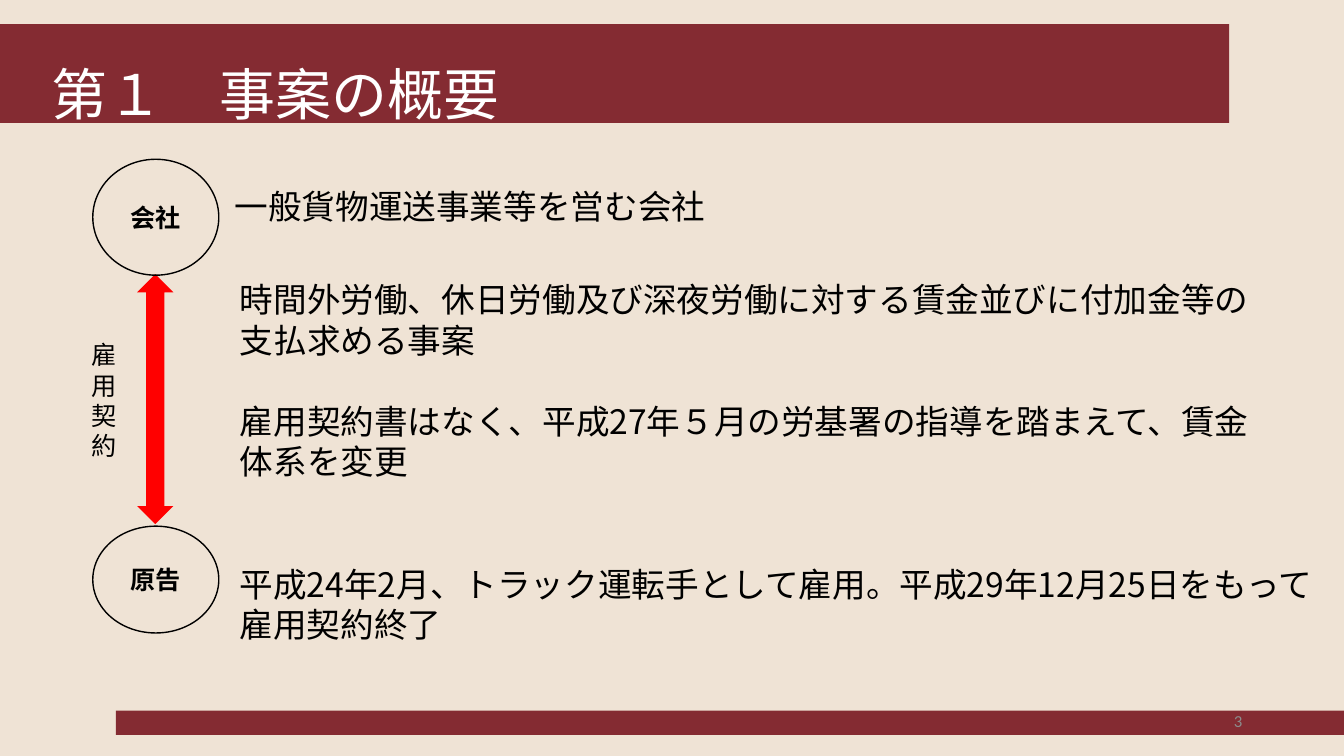
"""Build the case overview slide: company, plaintiff and their employment contract."""
import pptx
import pptx.util
import pptx.dml.color
import pptx.enum.shapes
import pptx.enum.text
import pptx.oxml.ns
import lxml.etree

Inches = pptx.util.Inches
Pt = pptx.util.Pt
SHAPE = pptx.enum.shapes.MSO_SHAPE
ALIGN = pptx.enum.text.PP_ALIGN
ANCHOR = pptx.enum.text.MSO_ANCHOR

THEME = {
    "paper": "EFE3D5", "band": "842B32", "ink": "000000", "white": "FFFFFF",
    "arrow": "FF0000", "muted": "8C8C8C",
    "font": "Noto Sans CJK JP", "number_font": "Calibri",
    "title": 40, "text": 24, "label": 18, "number": 12,
}


def color(name):
    return pptx.dml.color.RGBColor.from_string(THEME[name])


def write(box, lines, size, ink="ink", font="font", bold=False, align=ALIGN.LEFT,
          anchor=ANCHOR.TOP, spacing=None, gap=0):
    frame = box.text_frame
    frame.text = "\n".join(lines)
    frame.word_wrap = True
    frame.auto_size = pptx.enum.text.MSO_AUTO_SIZE.NONE
    frame.vertical_anchor = anchor
    for para in frame.paragraphs:
        para.alignment = align
        para.line_spacing = spacing
        para.space_before = Pt(0)
        para.space_after = Pt(gap)
        for span in para.runs:
            span.font.size = Pt(THEME[size])
            span.font.bold = bold
            span.font.color.rgb = color(ink)
            span.font.name = THEME[font]
            east = lxml.etree.SubElement(span.font._element, pptx.oxml.ns.qn("a:ea"))
            east.set("typeface", THEME[font])


deck = pptx.Presentation()
deck.slide_width, deck.slide_height = Inches(13.33), Inches(7.5)
page = deck.slides.add_slide(deck.slide_layouts[1])
page.background.fill.solid()
page.background.fill.fore_color.rgb = color("paper")
title, body = page.placeholders

filled_shapes = [
    (SHAPE.RECTANGLE, "band", (-0.01, 0.24, 12.2, 0.98)),
    (SHAPE.RECTANGLE, "band", (1.15, 7.05, 12.2, 0.24)),
    (SHAPE.UP_DOWN_ARROW, "arrow", (1.36, 2.72, 0.36, 2.48)),
]
for kind, fill, place in filled_shapes:
    shape = page.shapes.add_shape(kind, *map(Inches, place))
    shape.shadow.inherit = False
    shape.fill.solid()
    shape.fill.fore_color.rgb = color(fill)
    shape.line.fill.background()
    if kind == SHAPE.RECTANGLE:
        title._element.addprevious(shape._element)

for party, top, height in [("会社", 1.58, 1.15), ("原告", 5.22, 1.06)]:
    circle = page.shapes.add_shape(
        SHAPE.OVAL, Inches(0.92), Inches(top), Inches(1.25), Inches(height))
    circle.shadow.inherit = False
    circle.fill.background()
    circle.line.color.rgb = color("ink")
    circle.line.width = Pt(1)
    write(circle, [party], "label", bold=True, align=ALIGN.CENTER, anchor=ANCHOR.MIDDLE)

title.left, title.top, title.width, title.height = map(Inches, (0.41, 0.44, 12.93, 1.06))
write(title, ["第１　事案の概要"], "title", ink="white", anchor=ANCHOR.MIDDLE, spacing=0.9)

body.left, body.top, body.width, body.height = map(Inches, (2.28, 2.72, 10.48, 2.12))
write(body, [
    "時間外労働、休日労働及び深夜労働に対する賃金並びに付加金等の支払求める事案",
    "雇用契約書はなく、平成27年５月の労基署の指導を踏まえて、賃金体系を変更",
], "text", gap=29)
for para in body.text_frame.paragraphs:
    properties = para._p.get_or_add_pPr()
    properties.set("marL", "0")
    properties.set("indent", "0")
    lxml.etree.SubElement(properties, pptx.oxml.ns.qn("a:buNone"))

notes_beside = [
    ("雇用契約", "label", (0.81, 3.32, 0.44, 1.31)),
    ("一般貨物運送事業等を営む会社", "text", (2.23, 1.8, 7.84, 0.5)),
    ("平成24年2月、トラック運転手として雇用。平成29年12月25日をもって雇用契約終了",
     "text", (2.28, 5.54, 10.93, 0.91)),
]
for words, size, place in notes_beside:
    box = page.shapes.add_textbox(*map(Inches, place))
    write(box, [words], size)

number = page.shapes.add_textbox(Inches(9.42), Inches(6.95), Inches(3), Inches(0.4))
write(number, ["3"], "number", ink="muted", font="number_font",
      align=ALIGN.RIGHT, anchor=ANCHOR.MIDDLE)

deck.save("out.pptx")
